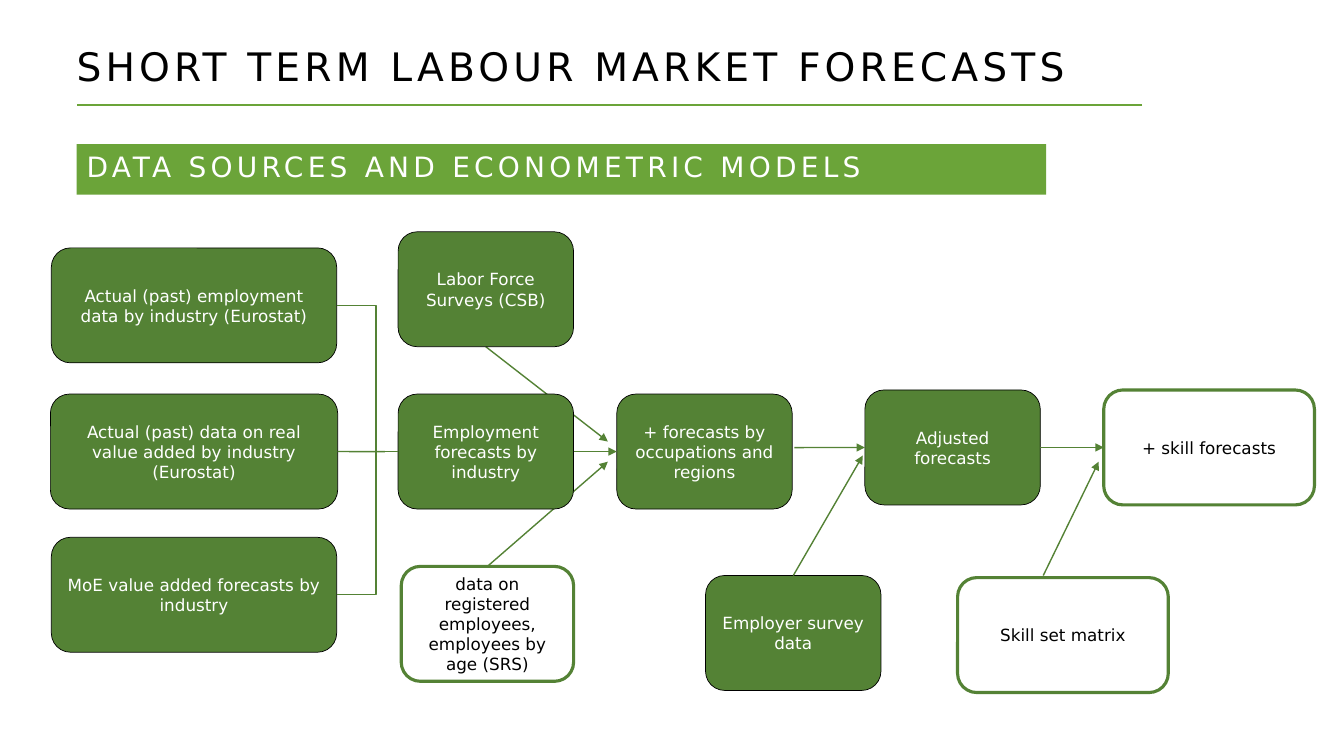
from lxml.etree import SubElement
from pptx import Presentation
from pptx.dml.color import RGBColor
from pptx.enum.shapes import MSO_CONNECTOR as Link, MSO_SHAPE as Shape
from pptx.enum.text import MSO_ANCHOR as Anchor, MSO_AUTO_SIZE as AutoSize, PP_ALIGN as Align
from pptx.oxml.ns import qn
from pptx.util import Pt

COLOURS = {"dark": "548235", "light": "6BA439", "white": "FFFFFF", "black": "000000"}
BOX_HEIGHT = 82.1
BOX_WIDTH = 125.3


def colour(name):
    return RGBColor.from_string(COLOURS[name])


class FlowSlide:
    """Holds the style and the current slide, and draws its elements."""

    font = "DejaVu Sans"

    def __init__(self, slide):
        self.slide = slide

    def label(self, shape, text, size, ink, align, spacing=None):
        frame = shape.text_frame
        frame.text = text
        frame.word_wrap = True
        frame.auto_size = AutoSize.NONE
        frame.vertical_anchor = Anchor.MIDDLE
        paragraph = frame.paragraphs[0]
        paragraph.alignment = align
        run = paragraph.runs[0]
        run.font.name = self.font
        run.font.size = Pt(size)
        run.font.color.rgb = colour(ink)
        if spacing:
            run._r.get_or_add_rPr().set("spc", str(spacing * 100))
        return paragraph

    def title(self, text, left, top, width, height):
        heading = self.slide.shapes.title
        heading.left, heading.top = Pt(left), Pt(top)
        heading.width, heading.height = Pt(width), Pt(height)
        self.label(heading, text, 28, "black", Align.LEFT, spacing=3)

    def panel(self, kind, left, top, width, height, fill):
        panel = self.slide.shapes.add_shape(kind, Pt(left), Pt(top), Pt(width), Pt(height))
        panel.shadow.inherit = False
        panel.fill.solid()
        panel.fill.fore_color.rgb = colour(fill)
        return panel

    def banner(self, text, left, top, width, height):
        banner = self.panel(Shape.RECTANGLE, left, top, width, height, "light")
        banner.line.fill.background()
        self.label(banner, text, 20, "white", Align.LEFT, spacing=3).line_spacing = 0.8

    def box(self, text, left, top, width=BOX_WIDTH, outlined=False):
        fill, edge, weight, ink = (
            ("white", "dark", 2.25, "black") if outlined else ("dark", "black", 0.5, "white"))
        box = self.panel(Shape.ROUNDED_RECTANGLE, left, top, width, BOX_HEIGHT, fill)
        box.line.color.rgb = colour(edge)
        box.line.width = Pt(weight)
        self.label(box, text, 12, ink, Align.CENTER)
        return box

    def line(self, start, end, kind=Link.STRAIGHT, stroke="dark", weight=1, arrow=False):
        line = self.slide.shapes.add_connector(kind, *map(Pt, start + end))
        line.line.color.rgb = colour(stroke)
        line.line.width = Pt(weight)
        properties = line._element.spPr
        if arrow:
            SubElement(properties.find(qn("a:ln")), qn("a:tailEnd"), type="triangle")
        SubElement(properties, qn("a:effectLst"))
        return line

    def elbow(self, start, end, preset, bend=None):
        geometry = self.line(start, end, Link.ELBOW)._element.spPr.find(qn("a:prstGeom"))
        geometry.set("prst", preset)
        if bend:
            guides = geometry.find(qn("a:avLst"))
            if guides is None:
                guides = SubElement(geometry, qn("a:avLst"))
            SubElement(guides, qn("a:gd"), name="adj1", fmla=f"val {bend}")


def main():
    deck = Presentation()
    deck.slide_width, deck.slide_height = Pt(960), Pt(540)
    flow = FlowSlide(deck.slides.add_slide(deck.slide_layouts[5]))

    flow.title("SHORT TERM LABOUR MARKET FORECASTS", 47.5, 18.7, 789.8, 56.2)
    flow.line((815.8, 74.9), (54.7, 74.9), stroke="light", weight=1.5)

    labour_arrow = flow.line((347, 247.7), (434.2, 315.4), arrow=True)
    registry_arrow = flow.line((348.1, 404.6), (434.2, 329.8), arrow=True)

    flow.box("Actual (past) employment data by industry (Eurostat)", 36.7, 177.1, 203.8)
    value_added = flow.box(
        "Actual (past) data on real value added by industry (Eurostat)", 36, 281.5, 205.2)
    flow.box("MoE value added forecasts by industry", 36.7, 383.8, 203.8)
    industry = flow.box("Employment forecasts by industry", 284.4, 281.5)
    occupations = flow.box("+ forecasts by occupations and regions", 440.6, 281.5)
    adjusted = flow.box("Adjusted forecasts", 617.8, 278.6)
    skills = flow.box("+ skill forecasts", 788.4, 278.6, 150.5, outlined=True)
    registry = flow.box("data on registered employees, employees by age (SRS)",
                        286.6, 404.6, 123.1, outlined=True)
    labour_survey = flow.box("Labor Force Surveys (CSB)", 284.4, 165.6)
    employer_survey = flow.box("Employer survey data", 504, 411.1)
    flow.box("Skill set matrix", 684, 412.6, 150.5, outlined=True)

    labour_arrow.begin_connect(labour_survey, 2)
    registry_arrow.begin_connect(registry, 0)

    flow.elbow((240.5, 218.2), (284.4, 322.6), "bentConnector3", bend=63700)
    flow.line((241.2, 322.6), (275, 322.6)).begin_connect(value_added, 3)
    flow.elbow((240.5, 424.8), (268.5, 313.2), "bentConnector2")

    industry_arrow = flow.line((409.7, 322.6), (440.6, 322.6), arrow=True)
    industry_arrow.begin_connect(industry, 3)
    industry_arrow.end_connect(occupations, 1)
    flow.line((567.4, 319.7), (617.8, 319.7), arrow=True).end_connect(adjusted, 1)
    flow.line((566.6, 411.1), (616.3, 325.4), arrow=True).begin_connect(employer_survey, 0)
    skills_arrow = flow.line((743.1, 319.7), (788.4, 319.7), arrow=True)
    skills_arrow.begin_connect(adjusted, 3)
    skills_arrow.end_connect(skills, 1)
    flow.line((745.2, 411.1), (784.8, 329.8), arrow=True)

    flow.banner("DATA SOURCES AND ECONOMETRIC MODELS", 54.7, 103, 692.6, 36)
    deck.save("out.pptx")


if __name__ == "__main__":
    main()
